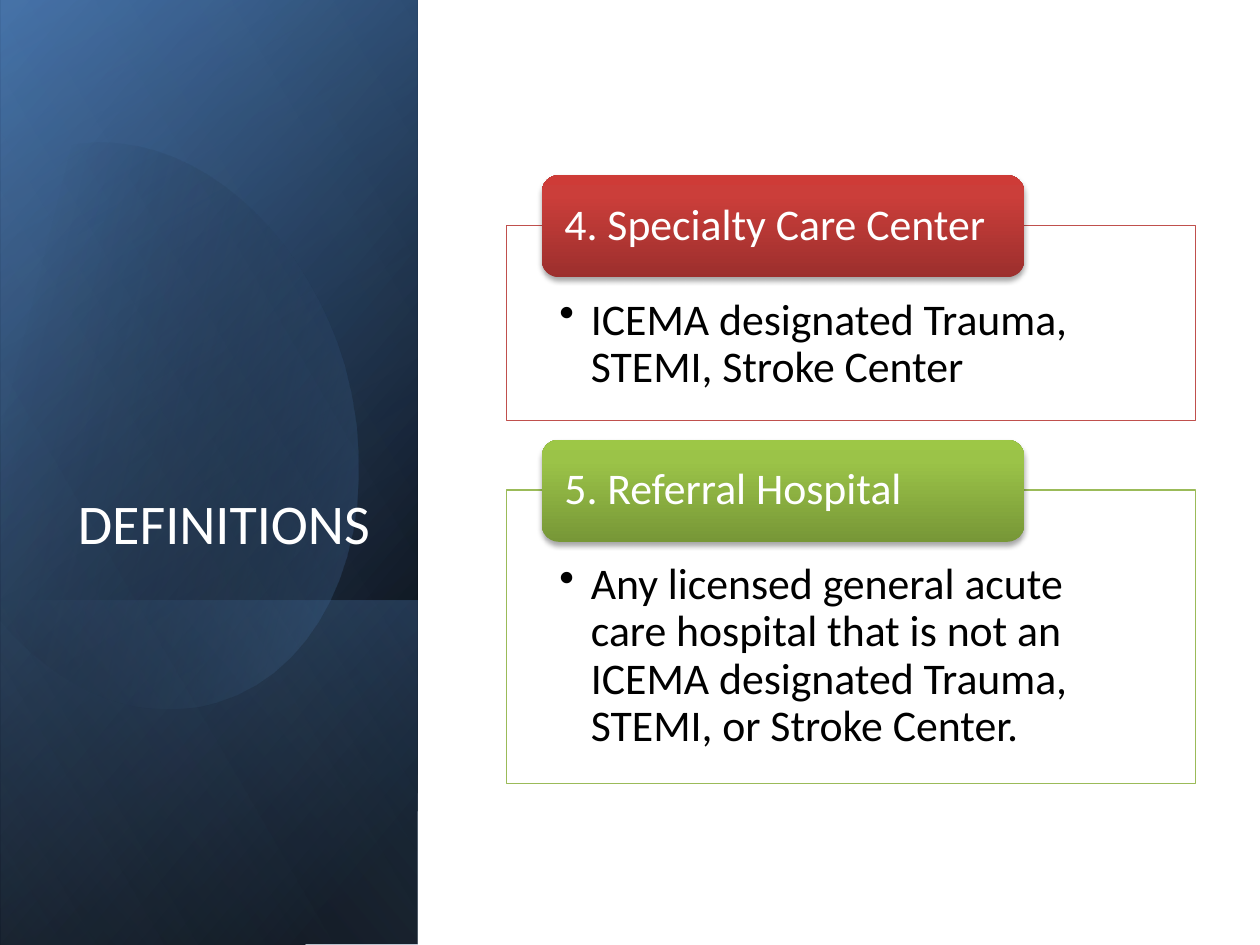
"""Build the definitions slide: a gradient title panel beside two definition cards."""
import math

import pptx
import pptx.dml.color
import pptx.enum.shapes
import pptx.enum.text
import pptx.oxml
import pptx.oxml.ns
import pptx.util
from pptx.util import Inches

RGBColor = pptx.dml.color.RGBColor
MSO_SHAPE = pptx.enum.shapes.MSO_SHAPE
MSO_ANCHOR = pptx.enum.text.MSO_ANCHOR
PP_ALIGN = pptx.enum.text.PP_ALIGN
qn = pptx.oxml.ns.qn
NAMESPACE = pptx.oxml.ns.nsdecls("a")

BLACK = RGBColor(0x00, 0x00, 0x00)
WHITE = RGBColor(0xFF, 0xFF, 0xFF)
NAVY = RGBColor(0x37, 0x60, 0x92)
BLUE = RGBColor(0x4F, 0x81, 0xBD)
PALE_BLUE = RGBColor(0x95, 0xB3, 0xD7)
RED = RGBColor(0xC0, 0x50, 0x4D)
RED_SHADES = (RGBColor(0x9C, 0x2F, 0x2D), RGBColor(0xCB, 0x3E, 0x3A), RGBColor(0xCE, 0x3B, 0x37))
GREEN = RGBColor(0x9B, 0xBB, 0x59)
GREEN_SHADES = (RGBColor(0x77, 0x97, 0x37), RGBColor(0x9B, 0xC3, 0x48), RGBColor(0x9D, 0xC7, 0x46))


def paint_gradient(shape, stops, angle):
    """Fill a shape with (position, colour, opacity) stops and no outline or shadow."""
    shape.shadow.inherit = False
    shape.line.fill.background()
    shape.fill.background()
    stop_xml = "".join(
        f'<a:gs pos="{position * 1000}"><a:srgbClr val="{color}">'
        f'<a:alpha val="{opacity * 1000}"/></a:srgbClr></a:gs>'
        for position, color, opacity in stops
    )
    gradient = pptx.oxml.parse_xml(
        f'<a:gradFill {NAMESPACE} rotWithShape="1"><a:gsLst>{stop_xml}</a:gsLst>'
        f'<a:lin ang="{angle * 60000}" scaled="0"/></a:gradFill>'
    )
    properties = shape.element.spPr
    properties.replace(properties.find(qn("a:noFill")), gradient)


def write_text(shape, text, size=25, color=WHITE, align=PP_ALIGN.LEFT, anchor=MSO_ANCHOR.MIDDLE,
               margins=(0.1, 0.05, 0.1, 0.05), line_spacing=0.9, bullet=False):
    """Write one formatted paragraph into a shape."""
    frame = shape.text_frame
    frame.word_wrap = True
    frame.auto_size = pptx.enum.text.MSO_AUTO_SIZE.NONE
    frame.vertical_anchor = anchor
    frame.margin_left, frame.margin_top, frame.margin_right, frame.margin_bottom = map(Inches, margins)
    paragraph = frame.paragraphs[0]
    paragraph.alignment = align
    paragraph.line_spacing = line_spacing
    if bullet:
        properties = paragraph._p.get_or_add_pPr()
        properties.set("marL", str(Inches(0.25)))
        properties.set("indent", str(Inches(-0.25)))
        properties.append(pptx.oxml.parse_xml(f'<a:buChar {NAMESPACE} char="•"/>'))
    run = paragraph.add_run()
    run.text = text
    run.font.name = "Calibri"
    run.font.size = pptx.util.Pt(size)
    run.font.color.rgb = color


presentation = pptx.Presentation()
presentation.slide_width = Inches(10)
presentation.slide_height = Inches(7.5)
slide = presentation.slides.add_slide(presentation.slide_layouts[5])
shapes = slide.shapes

OVAL_CENTER = (1.19, 3.35)
OVAL_ROTATION = -16.1
OVAL_CURVES = [
    ((0.96, 1.14), (1.71, 1.22), (2.44, 1.92), (2.73, 2.9)),
    ((2.73, 2.9), (3.07, 4.12), (2.62, 5.31), (1.71, 5.57)),
    ((1.71, 5.57), (1.14, 5.74), (0.53, 5.5), (0.07, 5)),
    ((-0.15, 1.54), (0.02, 1.37), (0.22, 1.25), (0.45, 1.18)),
    ((0.45, 1.18), (0.62, 1.13), (0.79, 1.12), (0.96, 1.14)),
]
OVAL_LEFT_EDGE = [(-0.03, 4.88), (-0.25, 1.66)]
STEPS = 16

outline = []
for index, curve in enumerate(OVAL_CURVES):
    if index == 3:
        outline += OVAL_LEFT_EDGE
    for step in range(STEPS + 1):
        t = step / STEPS
        weights = ((1 - t) ** 3, 3 * t * (1 - t) ** 2, 3 * t ** 2 * (1 - t), t ** 3)
        outline.append(tuple(sum(w * point[axis] for w, point in zip(weights, curve)) for axis in (0, 1)))

turn = math.radians(-OVAL_ROTATION)
upright = []
for x, y in outline:
    across, down = x - OVAL_CENTER[0], y - OVAL_CENTER[1]
    upright.append((
        Inches(OVAL_CENTER[0] + across * math.cos(turn) - down * math.sin(turn)),
        Inches(OVAL_CENTER[1] + across * math.sin(turn) + down * math.cos(turn)),
    ))

FULL_PANEL = (-2.09, 2.09, 7.5, 3.31)
panels = [
    (FULL_PANEL, [(8, BLACK, 100), (100, NAVY, 100)], 50),
    (FULL_PANEL, [(0, BLACK, 0), (99, BLUE, 46)], 30),
    ((0.29, 4.48, 2.74, 3.31), [(2, BLUE, 29), (100, BLACK, 30)], 130),
    (None, [(29, BLACK, 0), (100, BLUE, 43)], 30),
    (FULL_PANEL, [(0, PALE_BLUE, 0), (99, PALE_BLUE, 11)], 120),
]
for box, stops, angle in panels:
    if box:
        panel = shapes.add_shape(MSO_SHAPE.RECTANGLE, *map(Inches, box))
        panel.rotation = 90
        panel.element.spPr.find(qn("a:xfrm")).set("flipH", "1")
    else:
        builder = shapes.build_freeform(*upright[0])
        builder.add_line_segments(upright[1:], close=True)
        panel = builder.convert_to_shape()
        panel.rotation = OVAL_ROTATION
    paint_gradient(panel, stops, angle)

title = shapes.title
title.element.getparent().append(title.element)
title.left, title.top, title.width, title.height = map(Inches, (0.48, 1.84, 2.56, 2.62))
write_text(title, "DEFINITIONS", size=32, align=PP_ALIGN.RIGHT, anchor=MSO_ANCHOR.BOTTOM, line_spacing=1.0)

cards = [
    (1.79, 1.55, RED, RED_SHADES, "4. Specialty Care Center",
     "ICEMA designated Trauma, STEMI, Stroke Center"),
    (3.89, 2.33, GREEN, GREEN_SHADES, "5. Referral Hospital",
     "Any licensed general acute care hospital that is not an ICEMA designated Trauma, STEMI, "
     "or Stroke Center."),
]
for top, height, color, shades, term, definition in cards:
    card = shapes.add_shape(MSO_SHAPE.RECTANGLE, Inches(4.02), Inches(top), Inches(5.47), Inches(height))
    card.shadow.inherit = False
    card.fill.solid()
    card.fill.fore_color.rgb = WHITE
    card.line.color.rgb = color
    card.line.width = pptx.util.Pt(0.75)
    write_text(card, definition, color=BLACK, anchor=MSO_ANCHOR.TOP,
               margins=(0.42, 0.57, 0.42, 0.19), bullet=True)

    tab = shapes.add_shape(MSO_SHAPE.ROUNDED_RECTANGLE, Inches(4.3), Inches(top - 0.4), Inches(3.83), Inches(0.81))
    paint_gradient(tab, [(position, shade, 100) for position, shade in zip((0, 80, 100), shades)], 270)
    tab.element.spPr.find(qn("a:effectLst")).append(pptx.oxml.parse_xml(
        f'<a:outerShdw {NAMESPACE} blurRad="40000" dist="23000" dir="5400000" rotWithShape="0">'
        f'<a:srgbClr val="{BLACK}"><a:alpha val="35000"/></a:srgbClr></a:outerShdw>'
    ))
    write_text(tab, term, margins=(0.14, 0, 0.14, 0))

presentation.save("out.pptx")
